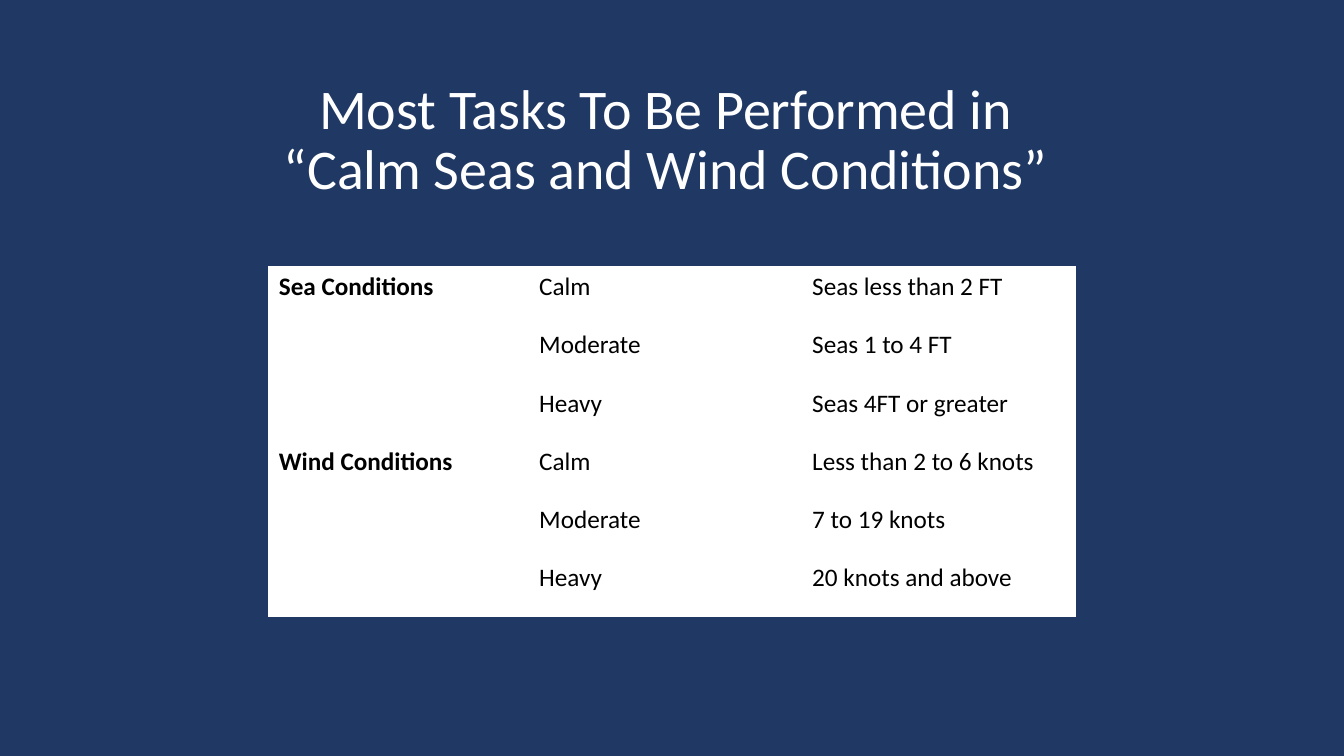
from lxml.etree import SubElement
from pptx import Presentation
from pptx.dml.color import RGBColor
from pptx.enum.text import MSO_ANCHOR, PP_ALIGN
from pptx.oxml.ns import qn
from pptx.util import Pt

NAVY, WHITE, BLACK = "203864", "FFFFFF", "000000"
CONDITIONS = [
    ("Sea Conditions", "Calm", "Seas less than 2 FT"),
    ("", "Moderate", "Seas 1 to 4 FT"),
    ("", "Heavy", "Seas 4FT or greater"),
    ("Wind Conditions", "Calm", "Less than 2 to 6 knots"),
    ("", "Moderate", "7 to 19 knots"),
    ("", "Heavy", "20 knots and above"),
]
COLUMN_WIDTHS = [186, 195, 195]
ROW_HEIGHT = 41.6


def paint(color_format, color):
    color_format.rgb = RGBColor.from_string(color)


def add_border(cell, side, position, width):
    properties = cell._tc.get_or_add_tcPr()
    line = properties.makeelement(qn(f"a:{side}"), {"w": str(Pt(width))})
    fill = SubElement(line, qn("a:solidFill"))
    SubElement(fill, qn("a:srgbClr"), val=WHITE)
    properties.insert(position, line)


deck = Presentation()
deck.slide_width, deck.slide_height = Pt(960), Pt(540)
page = deck.slides.add_slide(deck.slide_layouts[5])
page.background.fill.solid()
paint(page.background.fill.fore_color, NAVY)

title = page.shapes.title
title.left, title.top, title.width, title.height = Pt(66), Pt(28.8), Pt(828), Pt(144.5)
title.text_frame.text = "Most Tasks To Be Performed in \v“Calm Seas and Wind Conditions” "
title.text_frame.word_wrap = True
title.text_frame.vertical_anchor = MSO_ANCHOR.MIDDLE
para = title.text_frame.paragraphs[0]
para.alignment = PP_ALIGN.CENTER
para.line_spacing = 0.9
para.font.name, para.font.size = "Calibri", Pt(40)
paint(para.font.color, WHITE)

table = page.shapes.add_table(
    len(CONDITIONS), len(COLUMN_WIDTHS), Pt(192), Pt(190.5),
    Pt(sum(COLUMN_WIDTHS)), Pt(ROW_HEIGHT * len(CONDITIONS)),
).table
for column, width in zip(table.columns, COLUMN_WIDTHS):
    column.width = Pt(width)
for row_index, (row, texts) in enumerate(zip(table.rows, CONDITIONS)):
    row.height = Pt(ROW_HEIGHT)
    for column_index, (cell, text) in enumerate(zip(row.cells, texts)):
        cell.text = text
        cell.fill.solid()
        paint(cell.fill.fore_color, WHITE)
        para = cell.text_frame.paragraphs[0]
        para.font.name, para.font.size = "Calibri", Pt(18)
        para.font.bold = column_index == 0
        paint(para.font.color, BLACK)
        for position, side in enumerate(["lnL", "lnR", "lnT", "lnB"]):
            heavy = (row_index, side) in [(0, "lnB"), (1, "lnT")]
            add_border(cell, side, position, 3 if heavy else 1)

deck.save("out.pptx")
